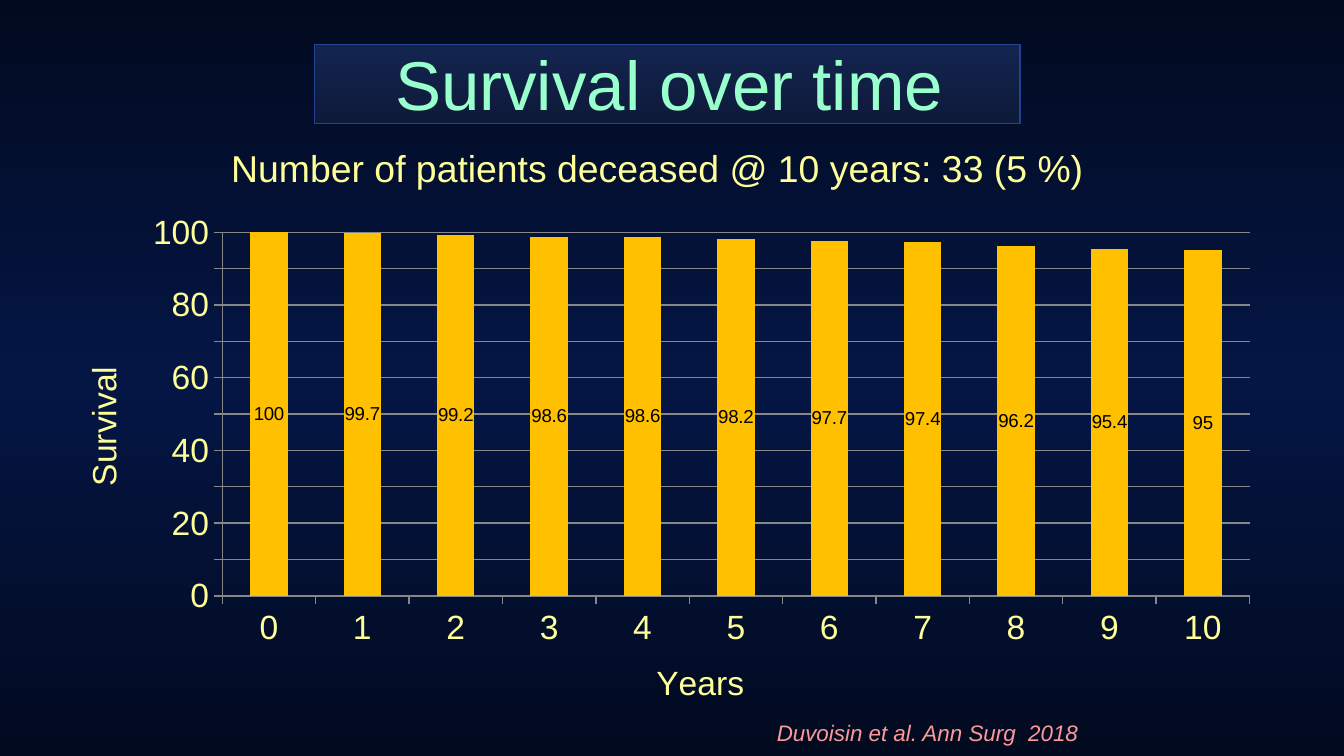
from copy import deepcopy

from pptx import Presentation
from pptx.chart.data import CategoryChartData
from pptx.dml.color import RGBColor
from pptx.enum import chart as charts, shapes, text
from pptx.oxml import parse_xml
from pptx.oxml.ns import nsdecls
from pptx.util import Inches, Pt

COLORS = {
    "edge": "020A20", "middle": "051645",
    "banner_top": "13244F", "banner_bottom": "0E1A39", "banner_line": "234291",
    "title": "99FFCC", "label": "FFFF99", "citation": "FF9999",
    "bar": "FFC000", "value": "000000", "grid": "878787",
}
COLORS = {name: RGBColor.from_string(value) for name, value in COLORS.items()}

presentation = Presentation()
presentation.slide_width = Inches(10)
presentation.slide_height = Inches(10) * 9 // 16
slide = presentation.slides.add_slide(presentation.slide_layouts[6])


def fill_downward(fill, element, names):
    """Give a top-to-bottom gradient with evenly spaced colours."""
    fill.gradient()
    fill.gradient_angle = 270
    stop_list = element.find(".//{*}gsLst")
    while len(stop_list) < len(names):
        stop_list.append(deepcopy(stop_list[-1]))
    for index, (stop, name) in enumerate(zip(fill.gradient_stops, names)):
        stop.position = index / (len(names) - 1)
        stop.color.rgb = COLORS[name]


def place_in_chart(element, x, y, width=None, height=None):
    """Set a manual layout, in fractions of the chart, on a title or plot area."""
    for old in element.findall("{*}layout"):
        element.remove(old)
    inner = '<c:layoutTarget val="inner"/>' if width else ""
    parts = [("xMode", "edge"), ("yMode", "edge"), ("x", x), ("y", y)]
    if width:
        parts += [("w", width), ("h", height)]
    values = "".join(f'<c:{tag} val="{value}"/>' for tag, value in parts)
    layout = parse_xml(f'<c:layout {nsdecls("c")}><c:manualLayout>{inner}{values}'
                       '</c:manualLayout></c:layout>')
    title_text = element.find("{*}tx")
    if title_text is None:
        element.insert(0, layout)
    else:
        title_text.addnext(layout)


fill_downward(slide.background.fill, slide.element, ["edge", "middle", "edge"])

banner = slide.shapes.add_shape(shapes.MSO_SHAPE.RECTANGLE, Inches(2.34), Inches(0.33),
                                Inches(5.25), Inches(0.59))
banner.shadow.inherit = False
fill_downward(banner.fill, banner.element, ["banner_top", "banner_bottom"])
banner.line.color.rgb = COLORS["banner_line"]
banner.line.width = Pt(0.75)

# Survival chart
survival = [100, 99.7, 99.2, 98.6, 98.6, 98.2, 97.7, 97.4, 96.2, 95.4, 95]
data = CategoryChartData()
data.categories = [str(year) for year in range(len(survival))]
data.add_series("Series 1", survival)
chart = slide.shapes.add_chart(charts.XL_CHART_TYPE.COLUMN_CLUSTERED, Inches(0.38),
                               Inches(1.49), Inches(9.1), Inches(3.98), data).chart
chart.has_legend = False
chart.has_title = False
chart.font.name = "Arial"
chart.font.size = Pt(10)
chart.font.color.rgb = COLORS["value"]

plot = chart.plots[0]
plot.gap_width = 150
plot.vary_by_categories = False
bars = plot.series[0].format.fill
bars.solid()
bars.fore_color.rgb = COLORS["bar"]
labels = plot.series[0].data_labels
labels.show_value = True
labels.position = charts.XL_LABEL_POSITION.CENTER
labels.font.name = "Arial"
labels.font.size = Pt(10)
labels.font.color.rgb = COLORS["value"]

for axis, name, x, y in [(chart.category_axis, "Years", 0.49, 0.85),
                         (chart.value_axis, "Survival", 0.02, 0.3)]:
    axis.major_tick_mark = charts.XL_TICK_MARK.OUTSIDE
    axis.format.line.color.rgb = COLORS["grid"]
    axis.format.line.width = Pt(0.75)
    run = axis.axis_title.text_frame.paragraphs[0].add_run()
    run.text = name
    run.font.bold = False
    for font in (axis.tick_labels.font, run.font):
        font.name = "Arial"
        font.size = Pt(18)
        font.color.rgb = COLORS["label"]
    place_in_chart(axis.axis_title._element, x, y)

value_axis = chart.value_axis
value_axis.minimum_scale, value_axis.maximum_scale = 0, 100
value_axis.major_unit = 10
value_axis.has_major_gridlines = True
value_axis.major_gridlines.format.line.color.rgb = COLORS["grid"]
value_axis.major_gridlines.format.line.width = Pt(0.75)
body = value_axis.axis_title.text_frame._txBody.find("{*}bodyPr")
body.set("rot", "-5400000")
body.set("vert", "horz")
place_in_chart(chart._chartSpace.find(".//{*}plotArea"), 0.14, 0.06, 0.84, 0.68)

# Title, summary and citation
texts = [
    ("Survival over time", 0.73, 0.15, 8.5, 0.94, 37, "title"),
    ("Number of patients deceased @ 10 years: 33 (5 %)", 1.64, 1.04, 8.12, 0.42, 20, "label"),
    ("Duvoisin et al. Ann Surg  2018", 5.7, 5.31, 4.83, 0.29, 12, "citation"),
]
for words, left, top, width, height, size, role in texts:
    box = slide.shapes.add_textbox(Inches(left), Inches(top), Inches(width), Inches(height))
    frame = box.text_frame
    frame.word_wrap = True
    frame.margin_left = frame.margin_right = Inches(0.08)
    frame.margin_top = frame.margin_bottom = Inches(0.04)
    paragraph = frame.paragraphs[0]
    if role == "title":
        frame.vertical_anchor = text.MSO_ANCHOR.MIDDLE
        paragraph.alignment = text.PP_ALIGN.CENTER
    run = paragraph.add_run()
    run.text = words
    run.font.name = "Arial"
    run.font.size = Pt(size)
    run.font.italic = role == "citation"
    run.font.color.rgb = COLORS[role]

presentation.save("out.pptx")
